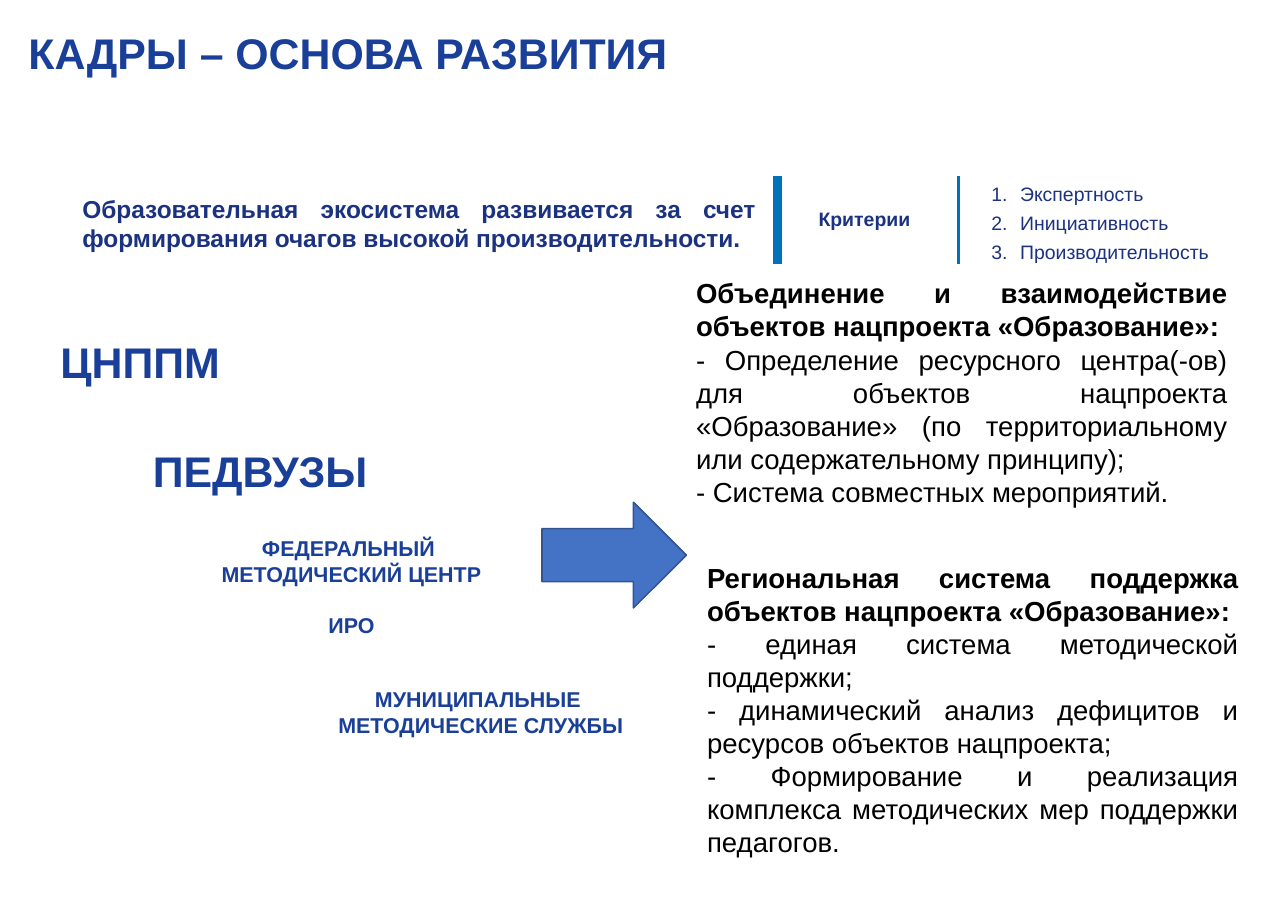
from lxml.etree import SubElement
from pptx import Presentation
from pptx.dml.color import RGBColor
from pptx.enum.shapes import MSO_CONNECTOR as Connector, MSO_SHAPE as Shape
from pptx.enum.text import MSO_AUTO_SIZE as AutoSize, PP_ALIGN as Align
from pptx.oxml.ns import qn
from pptx.util import Pt

COLORS = {"title": "1A3F98", "text": "1B3281", "rule": "0072BC", "black": "000000",
          "arrow": "4472C4", "arrow_edge": "325491"}

HEADING = dict(size=28, color="title", wrap=False)
SERVICE = dict(size=14, color="title", wrap=False, align=Align.CENTER)
MEASURES = dict(size=18, color="black", align=Align.JUSTIFY, bold_count=1)
NOTE = dict(size=12.7, color="text", gap=4)

# left, top, width, height, paragraphs, style
TEXTS = [
    (640.8, 115.2, 209.5, 57.6, ["Экспертность", "Инициативность", "Производительность"],
     NOTE | dict(numbered=True, bold_count=0, grow=False)),
    (527.8, 131.8, 131, 26.6, ["Критерии"], NOTE),
    (46.8, 123.1, 454.3, 69.1,
     ["Образовательная экосистема развивается за счет формирования очагов "
      "высокой производительности."],
     dict(size=16, color="text", align=Align.JUSTIFY, grow=False)),
    (447.8, 177.1, 361.4, 159.8,
     ["Объединение и взаимодействие объектов нацпроекта «Образование»:",
      "- Определение ресурсного центра(-ов) для объектов нацпроекта «Образование» "
      "(по территориальному или содержательному принципу);",
      "- Система совместных мероприятий."], MEASURES),
    (455, 362.9, 361.4, 203.8,
     ["Региональная система поддержка объектов нацпроекта «Образование»:",
      "- единая система методической поддержки;",
      "- динамический анализ дефицитов и ресурсов объектов нацпроекта;",
      "- Формирование и реализация комплекса методических мер поддержки педагогов."],
     MEASURES),
    (32.4, 216, 120.2, 41, ["ЦНППМ"], HEADING),
    (92.9, 287.3, 156.2, 41, ["ПЕДВУЗЫ"], HEADING),
    (136.8, 346.3, 185.8, 74.9, ["ФЕДЕРАЛЬНЫЙ \nМЕТОДИЧЕСКИЙ ЦЕНТР", "ИРО"],
     SERVICE | dict(gap=16.5)),
    (213.1, 445, 202.3, 41, ["МУНИЦИПАЛЬНЫЕ \nМЕТОДИЧЕСКИЕ СЛУЖБЫ"], SERVICE),
    (11.5, 13.7, 437, 41, ["КАДРЫ – ОСНОВА РАЗВИТИЯ"], HEADING),
]
RULES = [(508.3, 6), (626.4, 2.25)]  # x, line width
RULE_TOP, RULE_BOTTOM = 115.2, 172.8
ARROW = (354.2, 328.3, 94.3, 69.1)
NUMBER_INDENT = 18.7


def rgb(name):
    return RGBColor.from_string(COLORS[name])


def number(para, color):
    """Turn a paragraph into an item of a numbered list."""
    props = para._p.get_or_add_pPr()
    props.set("marL", str(Pt(NUMBER_INDENT)))
    props.set("indent", str(-Pt(NUMBER_INDENT)))
    bullet_color = SubElement(props, qn("a:buClr"))
    SubElement(bullet_color, qn("a:srgbClr"), val=COLORS[color])
    SubElement(props, qn("a:buAutoNum"), type="arabicPeriod")


def add_text(page, left, top, width, height, lines, style):
    box = page.shapes.add_textbox(Pt(left), Pt(top), Pt(width), Pt(height))
    frame = box.text_frame
    frame.word_wrap = style.get("wrap", True)
    frame.auto_size = AutoSize.SHAPE_TO_FIT_TEXT if style.get("grow", True) else AutoSize.NONE
    bold_count = style.get("bold_count", len(lines))
    for index, line in enumerate(lines):
        para = frame.add_paragraph() if index else frame.paragraphs[0]
        para.text = line
        para.alignment = style.get("align", Align.LEFT)
        if style.get("numbered"):
            number(para, style["color"])
        if index:
            para.space_before = Pt(style.get("gap", 0))
        for line_break in para._p.findall(qn("a:br")):
            SubElement(line_break, qn("a:rPr"), sz=str(style["size"] * 100))
        font_values = dict(name="Arial", size=Pt(style["size"]), bold=index < bold_count)
        for span in para.runs:
            for name, value in font_values.items():
                setattr(span.font, name, value)
            span.font.color.rgb = rgb(style["color"])


def add_rule(page, x, width):
    rule = page.shapes.add_connector(Connector.STRAIGHT, Pt(x), Pt(RULE_TOP),
                                     Pt(x), Pt(RULE_BOTTOM))
    rule.line.color.rgb = rgb("rule")
    rule.line.width = Pt(width)
    SubElement(rule._element.spPr, qn("a:effectLst"))


def add_arrow(page):
    arrow = page.shapes.add_shape(Shape.RIGHT_ARROW, *map(Pt, ARROW))
    arrow.shadow.inherit = False
    arrow.fill.solid()
    arrow.fill.fore_color.rgb = rgb("arrow")
    arrow.line.color.rgb = rgb("arrow_edge")
    arrow.line.width = Pt(1)


def main():
    deck = Presentation()
    deck.slide_width, deck.slide_height = Pt(841.68), Pt(595.44)
    page = deck.slides.add_slide(deck.slide_layouts[6])
    for x, width in RULES:
        add_rule(page, x, width)
    add_arrow(page)
    for text in TEXTS:
        add_text(page, *text)
    deck.save("out.pptx")


if __name__ == "__main__":
    main()
